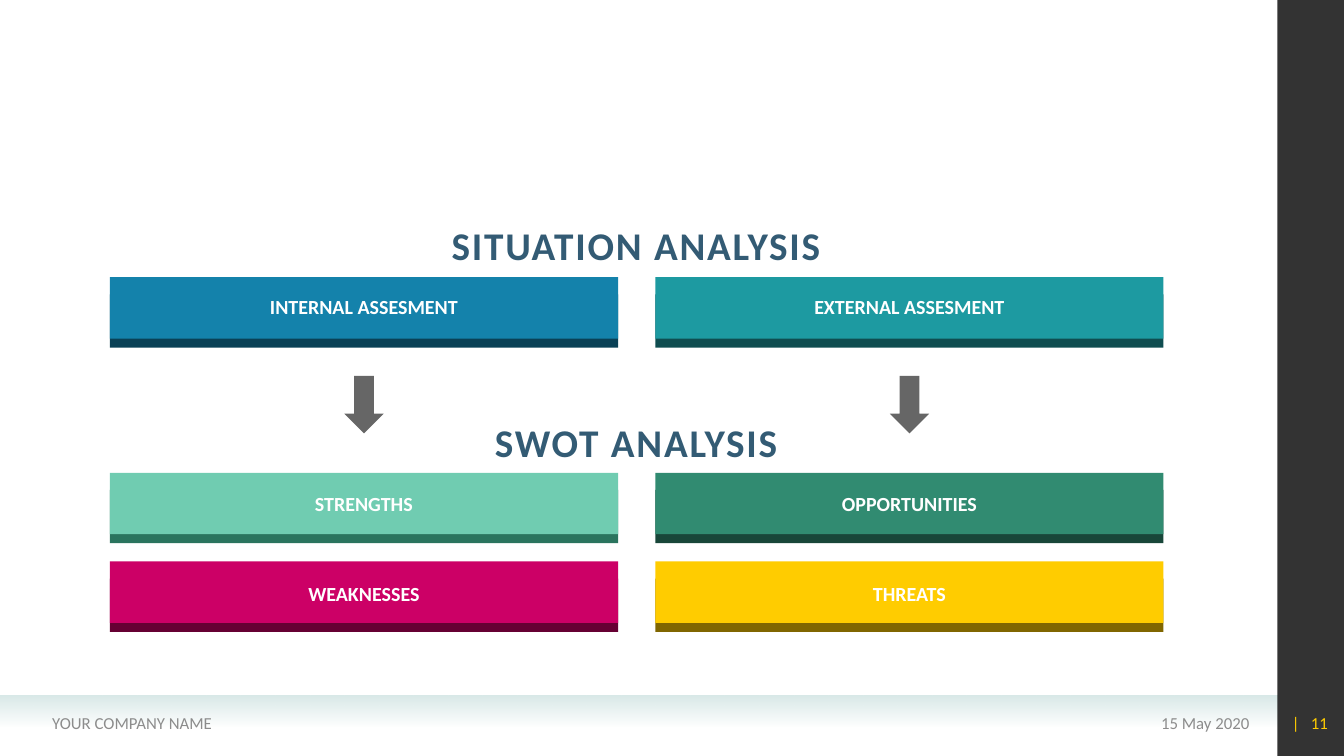
from dataclasses import dataclass

from lxml.etree import SubElement
from pptx import Presentation
from pptx.dml.color import RGBColor
from pptx.enum.shapes import MSO_SHAPE
from pptx.enum.text import MSO_ANCHOR, MSO_AUTO_SIZE, PP_ALIGN
from pptx.oxml.ns import qn
from pptx.util import Inches, Pt

SLIDE_WIDTH, SLIDE_HEIGHT = 13.33, 7.5
PANEL_LEFT = 12.67
COLUMN_LEFTS = (1.09, 6.5)
BAR_WIDTH, BAR_HEIGHT = 5.04, 0.61
EDGE_DROP, EDGE_HEIGHT = 0.17, 0.53
ROW_TOPS = (2.75, 4.69, 5.57)
LABEL_TOPS = (2.87, 4.83, 5.72)
LABEL_HEIGHT = 0.34
ARROW_TOP, ARROW_WIDTH, ARROW_HEIGHT = 3.73, 0.39, 0.57
HEADING_CENTER, HEADING_HEIGHT = 6.31, 0.57
FOOTER_TOP, FOOTER_HEIGHT = 6.97, 0.4


@dataclass(frozen=True)
class Box:
    left: float
    top: float
    width: float
    height: float

    def emu(self) -> list:
        return [Inches(v) for v in (self.left, self.top, self.width, self.height)]


@dataclass(frozen=True)
class Style:
    size: float
    color: str
    bold: bool = False
    spacing: float = 0


@dataclass(frozen=True)
class Bar:
    label: str
    column: int
    row: int
    face: str
    edge: str
    label_width: float


@dataclass(frozen=True)
class Heading:
    words: str
    top: float
    width: float


@dataclass(frozen=True)
class FooterItem:
    words: str
    left: float
    width: float
    align: PP_ALIGN


BAR_STYLE = Style(14.3, "FFFFFF", bold=True)
HEADING_STYLE = Style(28, "335B74", bold=True, spacing=1.3)
FOOTER_STYLE = Style(12, "8C8C8C")
NUMBER_STYLE = Style(12, "FFCC00")
DIVIDER_STYLE = Style(12, "FFCC00", spacing=2.7)

BARS = (
    Bar("INTERNAL ASSESMENT", 0, 0, "1482AB", "0A4156", 2.29),
    Bar("EXTERNAL ASSESMENT", 1, 0, "1D9AA1", "0F4D50", 2.33),
    Bar("STRENGTHS", 0, 1, "70CCB1", "2A745E", 1.3),
    Bar("OPPORTUNITIES", 1, 1, "318B71", "184639", 1.66),
    Bar("WEAKNESSES", 0, 2, "CC0066", "660033", 1.5),
    Bar("THREATS", 1, 2, "FFCC00", "806600", 1.03),
)
HEADINGS = (
    Heading("SITUATION ANALYSIS", 2.15, 4.26),
    Heading("SWOT ANALYSIS", 4.1, 3.32),
)
FOOTER_ITEMS = (
    FooterItem("15 May 2020", 9.1, 3.39, PP_ALIGN.RIGHT),
    FooterItem("YOUR COMPANY NAME", 0.42, 4.9, PP_ALIGN.LEFT),
)


def rgb(code: str) -> RGBColor:
    return RGBColor.from_string(code)


def centered(center: float, top: float, width: float, height: float) -> Box:
    return Box(center - width / 2, top, width, height)


def column_center(column: int) -> float:
    return COLUMN_LEFTS[column] + BAR_WIDTH / 2


def draw_shape(slide, box: Box, color: str, kind=MSO_SHAPE.RECTANGLE):
    shape = slide.shapes.add_shape(kind, *box.emu())
    shape.shadow.inherit = False
    shape.fill.solid()
    shape.fill.fore_color.rgb = rgb(color)
    shape.line.fill.background()
    return shape


def set_opacity(shape, percent: int) -> None:
    """Apply an opacity to the last colour of the shape's fill."""
    color = list(shape.element.spPr.iter(qn("a:srgbClr")))[-1]
    SubElement(color, qn("a:alpha")).set("val", str(percent * 1000))


def style_run(run, style: Style) -> None:
    run.font.name = "Calibri"
    run.font.size = Pt(style.size)
    run.font.bold = style.bold
    run.font.color.rgb = rgb(style.color)
    if style.spacing:
        run.font._element.set("spc", str(round(style.spacing * 100)))


def draw_text(slide, words: str, box: Box, style: Style, align=PP_ALIGN.CENTER,
              anchor=MSO_ANCHOR.MIDDLE, wrap: bool = False):
    """Draw one line of text and return its paragraph."""
    frame = slide.shapes.add_textbox(*box.emu()).text_frame
    frame.word_wrap = wrap
    frame.auto_size = MSO_AUTO_SIZE.NONE if wrap else MSO_AUTO_SIZE.SHAPE_TO_FIT_TEXT
    frame.vertical_anchor = anchor
    frame.text = words
    paragraph = frame.paragraphs[0]
    paragraph.alignment = align
    style_run(paragraph.runs[0], style)
    return paragraph


def draw_frame(slide) -> None:
    """Draw the footer band, the side panel and their texts."""
    band = draw_shape(slide, Box(0, 6.9, PANEL_LEFT, 0.31), "D9E9E8")
    band.fill.gradient()
    band.fill.gradient_angle = 270
    for stop in band.fill.gradient_stops:
        stop.color.rgb = rgb("D9E9E8")
    set_opacity(band, 0)

    panel = draw_shape(
        slide, Box(PANEL_LEFT, 0, SLIDE_WIDTH - PANEL_LEFT, SLIDE_HEIGHT), "000000")
    set_opacity(panel, 80)

    for item in FOOTER_ITEMS:
        box = Box(item.left, FOOTER_TOP, item.width, FOOTER_HEIGHT)
        draw_text(slide, item.words, box, FOOTER_STYLE, item.align, wrap=True)
    page = draw_text(slide, "| ", Box(12.6, FOOTER_TOP, 0.67, FOOTER_HEIGHT),
                     DIVIDER_STYLE, PP_ALIGN.RIGHT, wrap=True)
    number = page.add_run()
    number.text = "11"
    style_run(number, NUMBER_STYLE)


def draw_bar(slide, bar: Bar) -> None:
    left, top = COLUMN_LEFTS[bar.column], ROW_TOPS[bar.row]
    draw_shape(slide, Box(left, top + EDGE_DROP, BAR_WIDTH, EDGE_HEIGHT), bar.edge)
    draw_shape(slide, Box(left, top, BAR_WIDTH, BAR_HEIGHT), bar.face)


def draw_label(slide, bar: Bar) -> None:
    box = centered(column_center(bar.column), LABEL_TOPS[bar.row],
                   bar.label_width, LABEL_HEIGHT)
    draw_text(slide, bar.label, box, BAR_STYLE)


def main() -> None:
    deck = Presentation()
    deck.slide_width, deck.slide_height = Inches(SLIDE_WIDTH), Inches(SLIDE_HEIGHT)
    slide = deck.slides.add_slide(deck.slide_layouts[6])

    draw_frame(slide)
    for bar in BARS:
        draw_bar(slide, bar)
    for column in range(len(COLUMN_LEFTS)):
        box = centered(column_center(column), ARROW_TOP, ARROW_WIDTH, ARROW_HEIGHT)
        draw_shape(slide, box, "666666", MSO_SHAPE.DOWN_ARROW)
    for bar in BARS:
        draw_label(slide, bar)
    for heading in HEADINGS:
        box = centered(HEADING_CENTER, heading.top, heading.width, HEADING_HEIGHT)
        draw_text(slide, heading.words, box, HEADING_STYLE, anchor=MSO_ANCHOR.TOP)

    deck.save("out.pptx")


if __name__ == "__main__":
    main()
